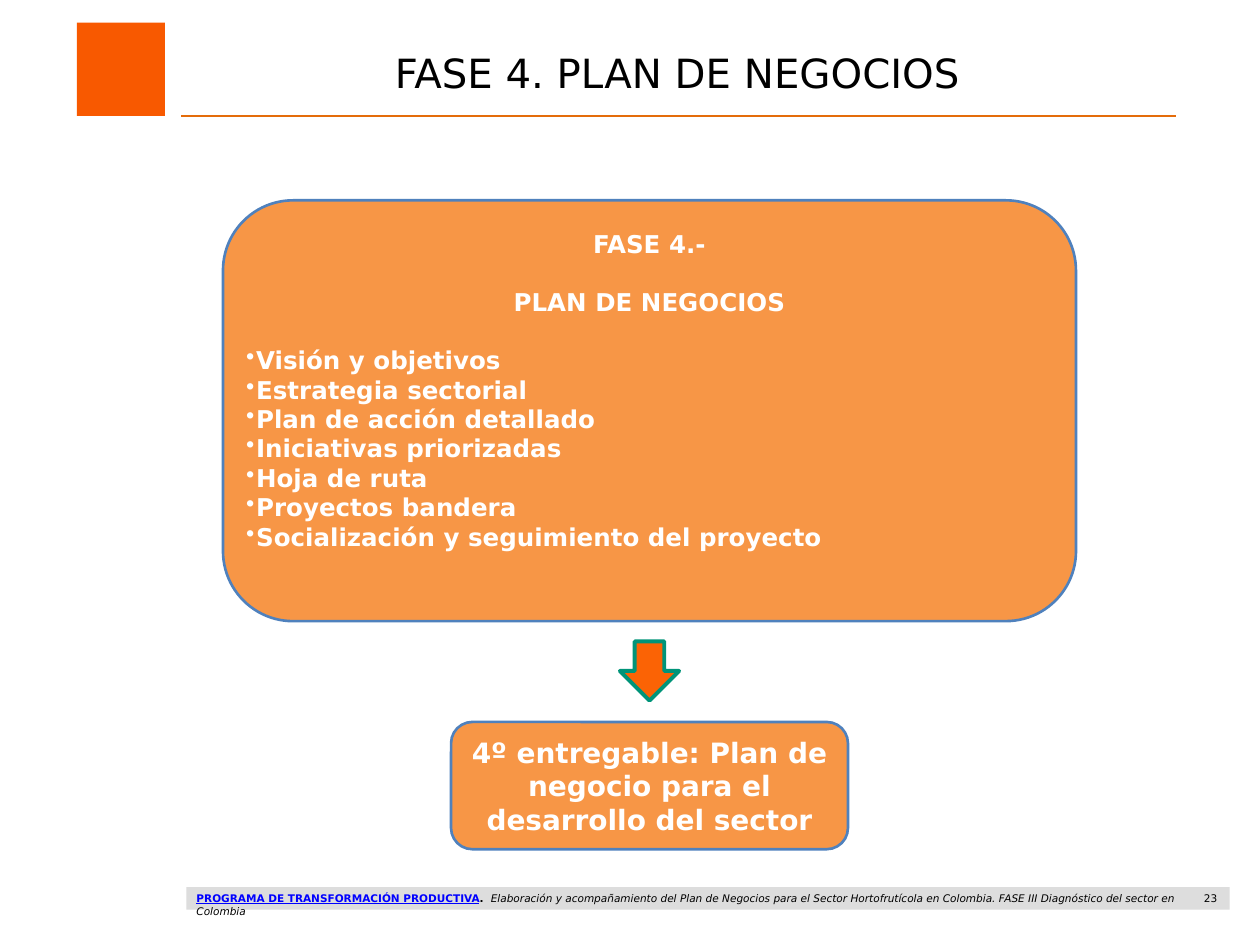
from dataclasses import dataclass

from lxml import etree
from pptx import Presentation
from pptx.dml.color import RGBColor
from pptx.enum.shapes import MSO_CONNECTOR, MSO_SHAPE
from pptx.enum.text import MSO_ANCHOR, PP_ALIGN
from pptx.oxml.ns import qn
from pptx.util import Inches, Pt

RECTANGLE = MSO_SHAPE.RECTANGLE
ROUNDED = MSO_SHAPE.ROUNDED_RECTANGLE
DOWN_ARROW = MSO_SHAPE.DOWN_ARROW
LEFT, CENTER, RIGHT = PP_ALIGN.LEFT, PP_ALIGN.CENTER, PP_ALIGN.RIGHT
TOP, MIDDLE = MSO_ANCHOR.TOP, MSO_ANCHOR.MIDDLE


@dataclass(frozen=True)
class Theme:
    font: str = "DejaVu Sans"
    title_size: float = 23
    phase_size: float = 14
    result_size: float = 16
    footer_size: float = 6
    black: str = "000000"
    white: str = "FFFFFF"
    link: str = "0000FF"
    logo: str = "F85900"
    footer: str = "DDDDDD"
    rule: str = "E46C0A"
    box: str = "F79646"
    box_line: str = "4F81BD"
    arrow: str = "FB6305"
    arrow_line: str = "009479"


theme = Theme()


def write(frame, paragraphs, size, color=theme.black, bold=False, align=LEFT,
          anchor=TOP, insets=(0.08, 0.04, 0.08, 0.04)):
    """Fill a frame; each paragraph is (spans, format), each span (text, format)."""
    frame.word_wrap = True
    frame.vertical_anchor = anchor
    (frame.margin_left, frame.margin_top,
     frame.margin_right, frame.margin_bottom) = map(Inches, insets)
    for index, (spans, look) in enumerate(paragraphs):
        para = frame.paragraphs[0] if index == 0 else frame.add_paragraph()
        para.alignment = look.get("align", align)
        if "before" in look:
            para.space_before = Pt(look["before"])
        if look.get("bullet"):
            properties = para._p.get_or_add_pPr()
            properties.set("marL", str(Inches(0.08)))
            properties.set("indent", str(-Inches(0.08)))
            etree.SubElement(properties, qn("a:buChar")).set("char", "•")
        for text, style in spans:
            span = para.add_run()
            span.text = text
            span.font.name = theme.font
            span.font.size = Pt(size)
            span.font.bold = style.get("bold", bold)
            span.font.italic = style.get("italic", False)
            span.font.underline = style.get("underline", False)
            span.font.color.rgb = RGBColor.from_string(style.get("color", color))


def add_block(page, kind, place, fill, line=None, width=1.5):
    shape = page.shapes.add_shape(kind, *map(Inches, place))
    shape.shadow.inherit = False
    shape.fill.solid()
    shape.fill.fore_color.rgb = RGBColor.from_string(fill)
    if line:
        shape.line.color.rgb = RGBColor.from_string(line)
        shape.line.width = Pt(width)
    else:
        shape.line.fill.background()
    return shape


deck = Presentation()
deck.slide_width, deck.slide_height = Inches(10), Inches(7.5)
page = deck.slides.add_slide(deck.slide_layouts[5])

# Header: plain square, title and rule
add_block(page, RECTANGLE, (0.61, 0.18, 0.7, 0.74), theme.logo)

title = page.shapes.title
title.left, title.top, title.width, title.height = map(Inches, (1.56, 0.38, 7.64, 0.39))
write(title.text_frame, [([("FASE 4. PLAN DE NEGOCIOS", {})], {})],
      theme.title_size, align=CENTER, anchor=MIDDLE, insets=(0, 0, 0, 0))

rule = page.shapes.add_connector(MSO_CONNECTOR.STRAIGHT, Inches(1.44), Inches(0.92),
                                 Inches(9.33), Inches(0.92))
rule.line.color.rgb = RGBColor.from_string(theme.rule)
rule.line.width = Pt(1.5)
etree.SubElement(rule._element.spPr, qn("a:effectLst"))

# Phase box: two centred headings, then the bulleted contents
contents = ["Visión y objetivos", "Estrategia sectorial", "Plan de acción detallado",
            "Iniciativas priorizadas", "Hoja de ruta", "Proyectos bandera",
            "Socialización y seguimiento del proyecto"]
line_gap = 16.5
phase_text = [([("FASE 4.-", {})], {"align": CENTER}),
              ([("PLAN DE NEGOCIOS", {})], {"align": CENTER, "before": line_gap})]
for index, item in enumerate(contents):
    phase_text.append(([(item, {})], {"bullet": True, "before": 0 if index else line_gap}))

phase = add_block(page, ROUNDED, (1.77, 1.59, 6.77, 3.34), theme.box, theme.box_line)
write(phase.text_frame, phase_text, theme.phase_size, theme.white, bold=True,
      anchor=MIDDLE, insets=(0.02, 0.05, 0.02, 0.38))

# Arrow down to the deliverable
add_block(page, DOWN_ARROW, (4.92, 5.09, 0.47, 0.47), theme.arrow, theme.arrow_line, 2.25)
result = add_block(page, ROUNDED, (3.58, 5.73, 3.15, 1.01), theme.box, theme.box_line)
write(result.text_frame,
      [([("4º entregable: Plan de negocio para el desarrollo del sector", {})], {})],
      theme.result_size, theme.white, bold=True, align=CENTER, anchor=MIDDLE,
      insets=(0.02, 0.05, 0.02, 0.05))

# Footer: grey band, page number and programme name
add_block(page, RECTANGLE, (1.48, 7.04, 8.28, 0.18), theme.footer)
programme = [("PROGRAMA DE TRANSFORMACIÓN PRODUCTIVA",
              {"bold": True, "underline": True, "color": theme.link}),
             (".  ", {"bold": True}),
             ("Elaboración y acompañamiento del Plan de Negocios para el Sector "
              "Hortofrutícola en Colombia. FASE III Diagnóstico del sector en Colombia",
              {"italic": True})]
footer_boxes = [((7.59, 7.04, 2.15, 0.43), [("23", {})], RIGHT),
                ((1.48, 7.04, 8.04, 0.29), programme, LEFT)]
for place, spans, align in footer_boxes:
    box = page.shapes.add_textbox(*map(Inches, place))
    write(box.text_frame, [(spans, {})], theme.footer_size, align=align)

deck.save("out.pptx")
